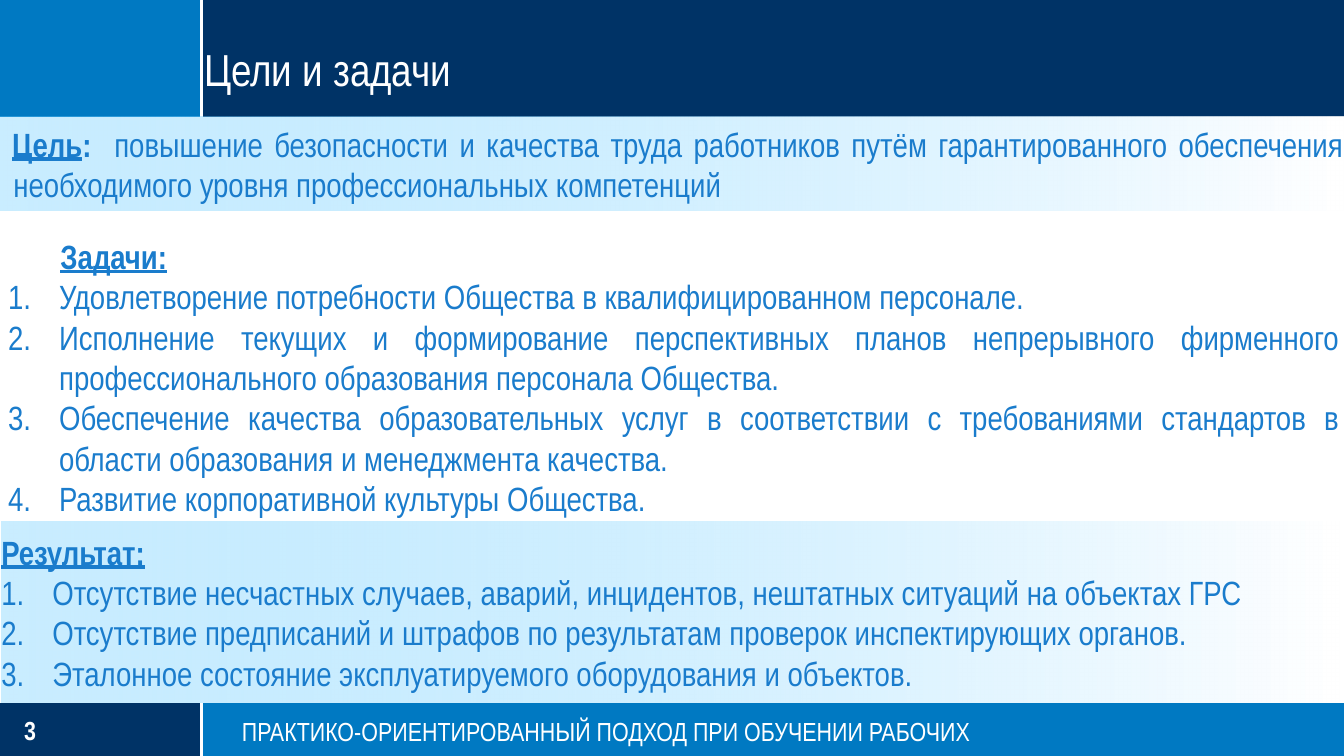
from lxml import etree
from pptx import Presentation
from pptx.dml.color import RGBColor
from pptx.enum.shapes import MSO_CONNECTOR, MSO_SHAPE
from pptx.enum.text import MSO_ANCHOR, MSO_AUTO_SIZE, PP_ALIGN
from pptx.oxml.ns import qn
from pptx.util import Inches, Pt

RECTANGLE = MSO_SHAPE.RECTANGLE
STRAIGHT = MSO_CONNECTOR.STRAIGHT
MIDDLE = MSO_ANCHOR.MIDDLE
NO_AUTOFIT = MSO_AUTO_SIZE.NONE
LEFT, JUSTIFY = PP_ALIGN.LEFT, PP_ALIGN.JUSTIFY

FONT = "Arial Narrow"
COLORS = {"blue": "0079C2", "navy": "003366", "white": "FFFFFF",
          "text": "1A7CCC", "sky": "66CCFF"}

TITLE = "Цели и задачи"
FOOTER = "ПРАКТИКО-ОРИЕНТИРОВАННЫЙ ПОДХОД ПРИ ОБУЧЕНИИ РАБОЧИХ"
PAGE_NUMBER = "3"
GOAL_HEADING = "Цель"
GOAL = ("  повышение безопасности и качества труда работников путём "
        "гарантированного обеспечения необходимого уровня "
        "профессиональных компетенций")
TASKS_HEADING = "Задачи:"
TASKS = [
    "Удовлетворение потребности Общества в квалифицированном персонале.",
    "Исполнение текущих и формирование перспективных планов непрерывного "
    "фирменного профессионального образования персонала Общества.",
    "Обеспечение качества образовательных услуг в соответствии с требованиями "
    "стандартов в области образования и менеджмента качества.",
    "Развитие корпоративной культуры Общества.",
]
RESULTS_HEADING = "Результат:"
RESULTS = [
    "Отсутствие несчастных случаев, аварий, инцидентов, нештатных ситуаций "
    "на объектах ГРС",
    "Отсутствие предписаний и штрафов по результатам проверок "
    "инспектирующих органов.",
    "Эталонное состояние эксплуатируемого оборудования и объектов.",
]

WIDTH = 10
HEIGHT = WIDTH * 9 / 16
HEADER_HEIGHT, FOOTER_TOP, SIDE_WIDTH = 0.87, 5.23, 1.51
FOOTER_HEIGHT = HEIGHT - FOOTER_TOP
BANDS = [
    (0, FOOTER_TOP, WIDTH, FOOTER_HEIGHT, "blue"),
    (0, 0, WIDTH, HEADER_HEIGHT, "navy"),
    (0, 0, SIDE_WIDTH, HEADER_HEIGHT, "blue"),
    (0, FOOTER_TOP, SIDE_WIDTH, FOOTER_HEIGHT, "navy"),
]
DIVIDERS = [
    (0, 5.22, WIDTH, 5.22),
    (1.5, 5.22, 1.5, HEIGHT),
    (1.5, 0, 1.5, 0.88),
    (0, 0.88, WIDTH, 0.88),
]
GRADIENT = [("sky", 35), ("white", 82)]


def color(name):
    return RGBColor.from_string(COLORS[name])


def add_rectangle(slide, left, top, width, height):
    shape = slide.shapes.add_shape(
        RECTANGLE, Inches(left), Inches(top), Inches(width), Inches(height))
    shape.shadow.inherit = False
    shape.line.fill.background()
    return shape


def add_gradient_panel(slide, *box):
    """Add a rectangle that fades from sky blue to white, left to right."""
    shape = add_rectangle(slide, *box)
    shape.fill.gradient()
    shape.fill.gradient_angle = 0
    for stop, (name, _) in zip(shape.fill.gradient_stops, GRADIENT):
        stop.color.rgb = color(name)
    tints = shape._element.spPr.iter(qn("a:srgbClr"))
    for tint, (_, opacity) in zip(list(tints), GRADIENT):
        etree.SubElement(tint, qn("a:alpha"), val=str(opacity * 1000))
    return shape


def add_text_box(slide, left, top, width, height):
    return slide.shapes.add_textbox(
        Inches(left), Inches(top), Inches(width), Inches(height))


def prepare_frame(shape, margins=(0, 0)):
    frame = shape.text_frame
    frame.word_wrap = True
    frame.auto_size = NO_AUTOFIT
    frame.vertical_anchor = MIDDLE
    frame.margin_left = frame.margin_right = Inches(margins[0])
    frame.margin_top = frame.margin_bottom = Inches(margins[1])
    return frame


def format_paragraph(paragraph, align=LEFT, margin=0, indent=0, bullet=None):
    paragraph.alignment = align
    paragraph.space_before = Pt(0)
    properties = paragraph._p.get_or_add_pPr()
    properties.set("marL", str(Inches(margin)))
    properties.set("indent", str(Inches(indent)))
    if bullet == "number":
        etree.SubElement(properties, qn("a:buAutoNum"), type="arabicPeriod")
    else:
        etree.SubElement(properties, qn("a:buNone"))


def add_run(paragraph, text, size=18, name="text", bold=False, underline=False):
    run = paragraph.add_run()
    run.text = text
    font = run.font
    font.name, font.size = FONT, Pt(size)
    font.bold, font.underline = bold, underline
    font.color.rgb = color(name)


def add_numbered_section(shape, heading, items, indent=0, spacing=1.0):
    frame = prepare_frame(shape)
    paragraph = frame.paragraphs[0]
    format_paragraph(paragraph, indent=indent)
    paragraph.line_spacing = spacing
    add_run(paragraph, heading, bold=True, underline=True)
    for item in items:
        paragraph = frame.add_paragraph()
        format_paragraph(paragraph, JUSTIFY, 0.38, -0.38, "number")
        add_run(paragraph, item)


def fill_placeholder(slide, shape, text, box, size, margins=(0, 0)):
    """Place a placeholder in front of the bands and write one line in it."""
    shape.left, shape.top, shape.width, shape.height = map(Inches, box)
    paragraph = prepare_frame(shape, margins).paragraphs[0]
    format_paragraph(paragraph)
    add_run(paragraph, text, size, "white")
    slide.shapes._spTree.append(shape._element)


def main():
    presentation = Presentation()
    presentation.slide_width = Inches(WIDTH)
    presentation.slide_height = Inches(HEIGHT)
    slide = presentation.slides.add_slide(presentation.slide_layouts[1])

    for *box, name in BANDS:
        band = add_rectangle(slide, *box)
        band.fill.solid()
        band.fill.fore_color.rgb = color(name)

    page_number = add_text_box(slide, 0.18, 5.31, 1.01, 0.24)
    paragraph = prepare_frame(page_number).paragraphs[0]
    add_run(paragraph, PAGE_NUMBER, 14, "white", bold=True)

    for ends in DIVIDERS:
        divider = slide.shapes.add_connector(STRAIGHT, *map(Inches, ends))
        divider.line.color.rgb = color("white")
        divider.line.width = Pt(1.25)
        etree.SubElement(divider._element.spPr, qn("a:effectLst"))

    fill_placeholder(slide, slide.shapes.title, TITLE,
                     (1.52, 0.15, 8.13, 0.72), 24)

    goal_panel = add_gradient_panel(slide, 0, HEADER_HEIGHT, WIDTH, 0.7)
    paragraph = prepare_frame(goal_panel).paragraphs[0]
    format_paragraph(paragraph, JUSTIFY, 0.1, -0.01)
    add_run(paragraph, GOAL_HEADING, bold=True, underline=True)
    add_run(paragraph, ":", bold=True)
    add_run(paragraph, GOAL)

    tasks_box = add_text_box(slide, 0.06, 1.61, 9.91, 2.24)
    add_numbered_section(tasks_box, TASKS_HEADING, TASKS, 0.39, 1.5)

    results_panel = add_gradient_panel(slide, 0.01, 3.88, 9.96, 1.35)
    add_numbered_section(results_panel, RESULTS_HEADING, RESULTS)

    fill_placeholder(slide, slide.placeholders[1], FOOTER,
                     (1.7, 5.27, 8.3, 0.34), 14, (0.1, 0.05))

    presentation.save("out.pptx")


if __name__ == "__main__":
    main()
